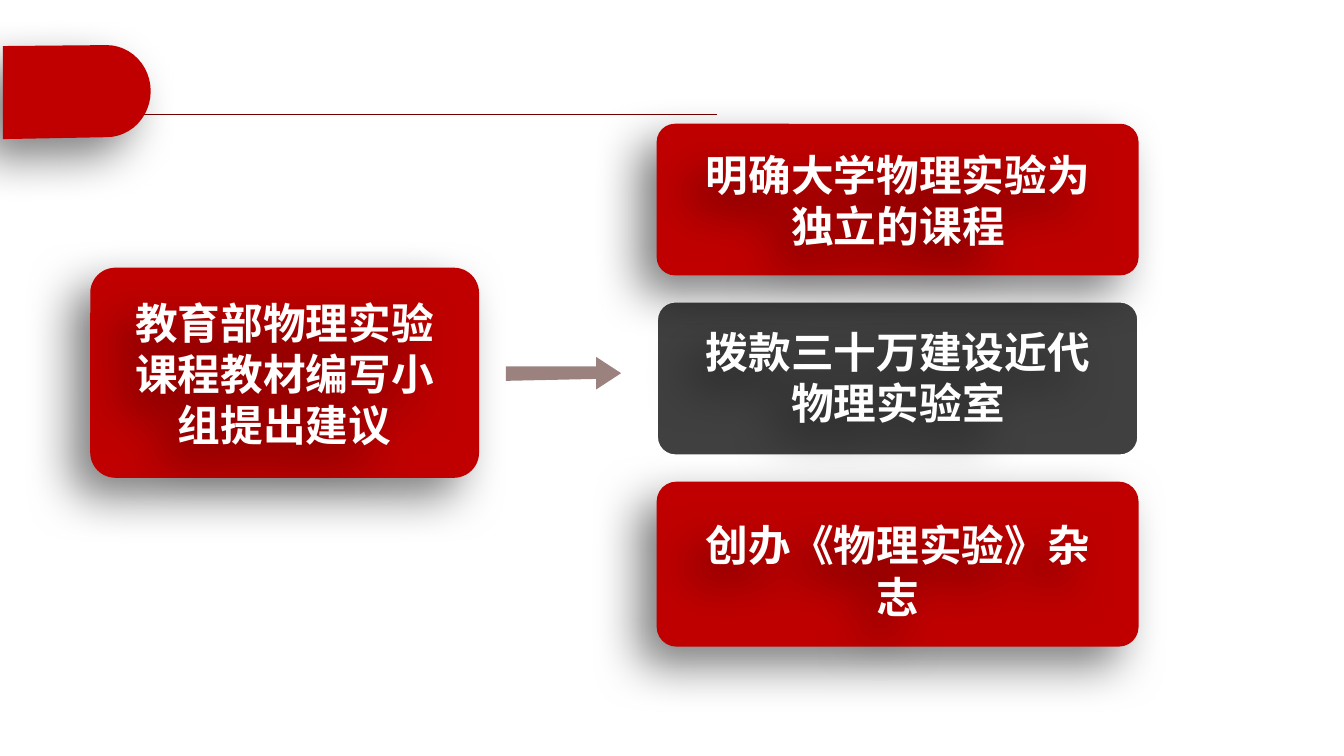
"""Build a slide showing how one proposal led to three outcomes for physics experiments."""
from math import cos, pi, sin

from lxml import etree
from pptx import Presentation
from pptx.dml.color import RGBColor
from pptx.enum.shapes import MSO_CONNECTOR, MSO_SHAPE
from pptx.enum.text import MSO_ANCHOR, PP_ALIGN
from pptx.oxml.ns import qn
from pptx.util import Inches, Pt

ROUNDED = MSO_SHAPE.ROUNDED_RECTANGLE
STRAIGHT = MSO_CONNECTOR.STRAIGHT
MIDDLE = MSO_ANCHOR.MIDDLE
CENTER = PP_ALIGN.CENTER
COLUMNS = 140
RED, GREY, WHITE = "C00000", "404040", "FFFFFF"


def color(value):
    """Turn a hex string into a colour."""
    return RGBColor.from_string(value)


def assign(target, values):
    """Set every named attribute on the target."""
    for name, value in values.items():
        setattr(target, name, value)


class SlideBuilder:
    """Hold the style and the current slide, and draw each kind of element."""

    font = {"name": "Noto Sans CJK SC", "size": Pt(32), "bold": True}
    frame = {"word_wrap": True, "vertical_anchor": MIDDLE,
             "margin_left": Inches(0.15), "margin_right": Inches(0.15)}
    shadow = {"blurRad": Pt(35), "dist": Pt(20), "dir": 135 * 60000,
              "algn": "ctr", "rotWithShape": 0}

    def __init__(self, presentation):
        """Add a blank slide and measure its grid cell."""
        self.slide = presentation.slides.add_slide(presentation.slide_layouts[6])
        self.cell = presentation.slide_width / COLUMNS

    def grid(self, *cells):
        """Convert grid cells to slide lengths."""
        return [round(cell * self.cell) for cell in cells]

    def effects(self, shape, shadowed):
        """Replace the inherited effects, with a soft shadow if wanted."""
        properties = shape._element.spPr
        effect_list = properties.find(qn("a:effectLst"))
        if effect_list is None:
            effect_list = etree.SubElement(properties, qn("a:effectLst"))
        if shadowed:
            values = {name: str(value) for name, value in self.shadow.items()}
            outer = etree.SubElement(effect_list, qn("a:outerShdw"), values)
            black = etree.SubElement(outer, qn("a:srgbClr"), val="000000")
            etree.SubElement(black, qn("a:alpha"), val="50000")

    def fill(self, shape, value, shadowed):
        """Give a shape a solid fill, no line and its own effects."""
        shape.shadow.inherit = False
        shape.fill.solid()
        shape.fill.fore_color.rgb = color(value)
        shape.line.fill.background()
        self.effects(shape, shadowed)

    def rule(self, start, end, value, width):
        """Draw a straight line between two grid points."""
        line = self.slide.shapes.add_connector(STRAIGHT, *self.grid(*start, *end))
        line.line.color.rgb = color(value)
        line.line.width = Pt(width)
        self.effects(line, False)

    def outline(self, points, value, shadowed=False, alpha=None):
        """Draw a filled polygon through grid points."""
        first, *others = [self.grid(*point) for point in points]
        builder = self.slide.shapes.build_freeform(*first)
        builder.add_line_segments(others, close=True)
        shape = builder.convert_to_shape()
        self.fill(shape, value, shadowed)
        if alpha is not None:
            fill_color = shape._element.spPr.find(qn("a:solidFill"))[0]
            etree.SubElement(fill_color, qn("a:alpha"), val=str(alpha * 1000))

    def card(self, text, box, text_box, value, border=None):
        """Draw a rounded card grouped with its centred label."""
        shapes = self.slide.shapes.add_group_shape().shapes
        card = shapes.add_shape(ROUNDED, *self.grid(*box))
        card.adjustments[0] = 0.12
        self.fill(card, value, border is None)
        if border:
            card.line.color.rgb = color(border)
            card.line.width = Pt(2)
        label = shapes.add_textbox(*self.grid(*text_box))
        self.effects(label, True)
        assign(label.text_frame, self.frame)
        paragraph = label.text_frame.paragraphs[0]
        paragraph.alignment = CENTER
        run = paragraph.add_run()
        run.text = text
        assign(run.font, self.font)
        run.font.color.rgb = color(WHITE)
        east_asian = etree.SubElement(run._r.get_or_add_rPr(), qn("a:ea"))
        east_asian.set("typeface", self.font["name"])


def main():
    """Build and save the slide."""
    presentation = Presentation()
    assign(presentation, {"slide_width": Inches(14), "slide_height": Inches(7.88)})
    builder = SlideBuilder(presentation)

    builder.rule((9.2, 11.9), (74.7, 11.9), "760000", 0.75)
    steps = 24
    angles = [pi * step / steps - pi / 2 for step in range(steps + 1)]
    cap = [(11.1 + 4.6 * cos(angle), 9.5 + 4.8 * sin(angle)) for angle in angles]
    builder.outline([(0.3, 4.8), *cap, (0.3, 14.5)], RED, shadowed=True)

    outcomes = [
        ("拨款三十万建设近代物理实验室", (31.4, 16.1), (32.1, 14.4), GREY, WHITE),
        ("明确大学物理实验为独立的课程", (12.9, 15.8), (14.7, 12.3), RED, None),
        ("创办《物理实验》杂志", (50.2, 17.2), (54.9, 9.1), RED, None),
    ]
    for text, (top, height), (text_top, text_height), value, border in outcomes:
        builder.card(text, (68.4, top, 50.2, height),
                     (70.3, text_top, 46.5, text_height), value, border)

    builder.outline([(52.7, 39.7), (62.1, 39.5), (62.1, 40.6), (64.7, 38.9),
                     (62.1, 37.2), (62.1, 38.2), (52.7, 38.2)], "3A0700", alpha=50)
    builder.card("教育部物理实验课程教材编写小组提出建议",
                 (9.4, 27.9, 40.5, 21.9), (10.9, 30.4, 37.5, 17), RED)
    presentation.save("out.pptx")


if __name__ == "__main__":
    main()
